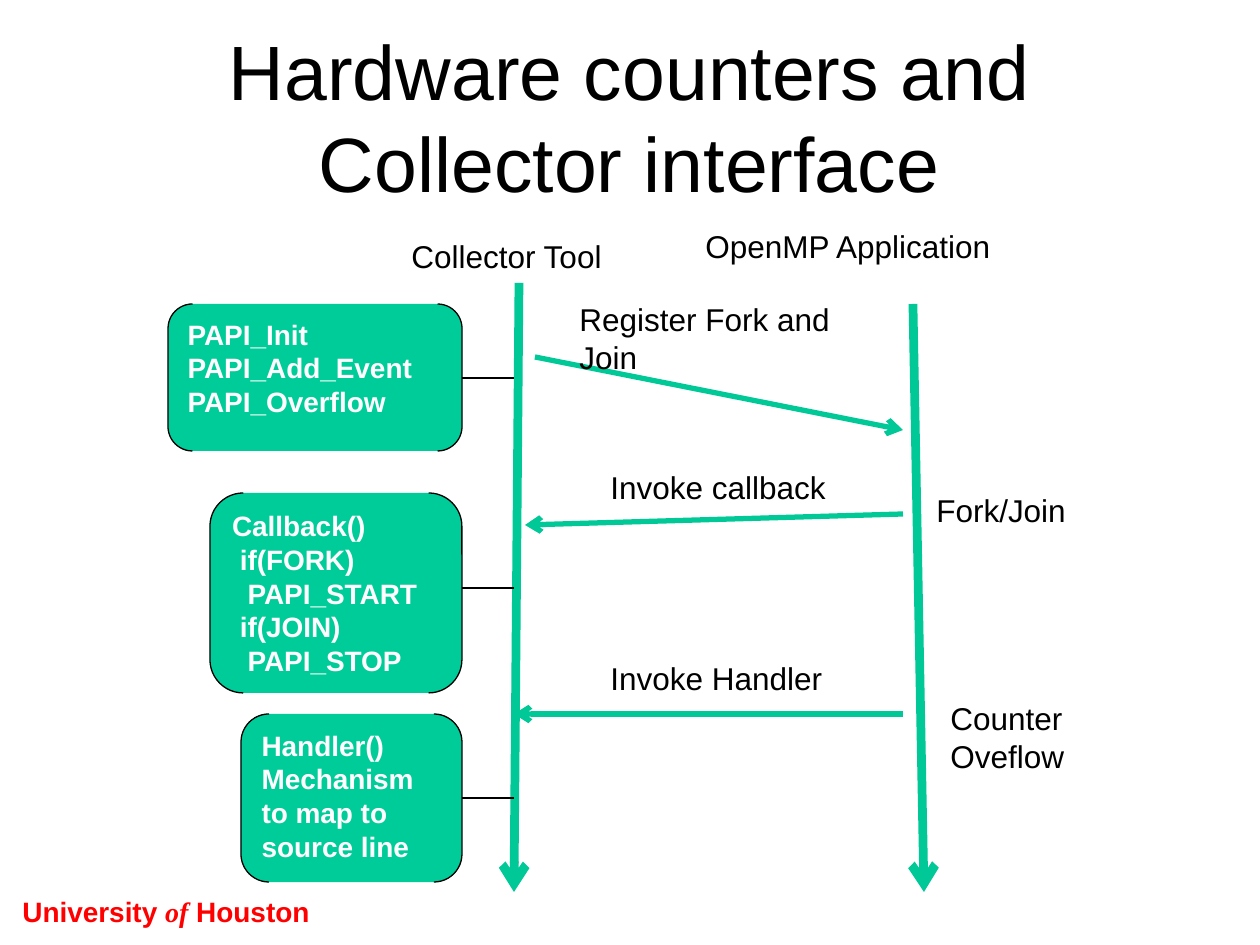
from lxml import etree
from pptx import Presentation
from pptx import util as u
from pptx.dml.color import RGBColor
from pptx.enum import shapes, text
from pptx.oxml.ns import qn

EMU_PER_PX = 914400 / 126
BLACK, WHITE, RED = "000000", "FFFFFF", "FF0000"
ARROW_GREEN, BOX_GREEN = "00C896", "00CC99"


def px(*lengths):
    return [u.Emu(round(n * EMU_PER_PX)) for n in lengths]


def rgb(color):
    return RGBColor.from_string(color)


def style(font, size, color, bold=False, name="Arial"):
    font.name = name
    font.size = u.Pt(size)
    font.bold = bold
    font.color.rgb = rgb(color)


def add_title(s, wording, box):
    sp = s.shapes.title
    sp.left, sp.top, sp.width, sp.height = px(*box)
    tf = sp.text_frame
    tf.text = wording
    tf.auto_size = text.MSO_AUTO_SIZE.NONE
    tf.vertical_anchor = text.MSO_ANCHOR.MIDDLE
    p = tf.paragraphs[0]
    p.alignment = text.PP_ALIGN.CENTER
    style(p.font, 44, BLACK)


def add_label(s, wording, box, wrap=False):
    tf = s.shapes.add_textbox(*px(*box)).text_frame
    tf.word_wrap = wrap
    tf.text = wording
    style(tf.paragraphs[0].font, 18, BLACK)


def add_footer(s, box):
    tf = s.shapes.add_textbox(*px(*box)).text_frame
    tf.word_wrap = True
    p = tf.paragraphs[0]
    style(p.font, 16, RED, bold=True)
    for wording in ("University ", "of", " Houston"):
        r = p.add_run()
        r.text = wording
        if wording == "of":
            r.font.name = "Times New Roman"
            r.font.italic = True


def add_code_box(s, lines, box):
    sp = s.shapes.add_shape(shapes.MSO_SHAPE.DOUBLE_BRACKET, *px(*box))
    sp.shadow.inherit = False
    sp.fill.solid()
    sp.fill.fore_color.rgb = rgb(BOX_GREEN)
    sp.line.color.rgb = rgb(BLACK)
    sp.line.width = u.Pt(0.75)
    tf = sp.text_frame
    tf.word_wrap = True
    tf.vertical_anchor = text.MSO_ANCHOR.TOP
    tf.text = "\n".join(lines)
    for p in tf.paragraphs:
        p.alignment = text.PP_ALIGN.LEFT
        style(p.font, 16, WHITE, bold=True)


def add_line(s, ends, color, width, arrow=False):
    line = s.shapes.add_connector(shapes.MSO_CONNECTOR.STRAIGHT, *px(*ends))
    line.line.color.rgb = rgb(color)
    line.line.width = u.Pt(width)
    if arrow:
        etree.SubElement(line.line._get_or_add_ln(), qn("a:tailEnd"), type="arrow")
    etree.SubElement(line._element.spPr, qn("a:effectLst"))


def main():
    prs = Presentation()
    prs.slide_width, prs.slide_height = px(1260, 945)
    s = prs.slides.add_slide(prs.slide_layouts[5])

    add_footer(s, (10, 888, 336, 47))
    add_title(s, "Hardware counters and Collector interface", (63, 38, 1133, 156))

    messages = [(535, 357, 903, 430), (903, 514, 525, 525), (903, 714, 514, 714)]
    for ends in messages:
        add_line(s, ends, ARROW_GREEN, 3, arrow=True)
    timelines = [(519, 283, 514, 892), (913, 304, 924, 892)]
    for ends in timelines:
        add_line(s, ends, ARROW_GREEN, 5, arrow=True)

    add_label(s, "OpenMP Application", (693, 221, 312, 50))
    add_label(s, "Collector Tool", (399, 231, 218, 50))
    add_label(s, "Invoke callback", (598, 462, 243, 50))
    add_label(s, "Invoke Handler", (598, 653, 239, 50))
    add_label(s, "Register Fork and Join", (567, 294, 284, 89), wrap=True)
    add_label(s, "Fork/Join", (924, 485, 165, 50), wrap=True)
    add_label(s, "Counter Oveflow", (938, 693, 165, 89), wrap=True)

    box_right, tool_x = 462, 514
    code_boxes = [
        (["PAPI_Init", "PAPI_Add_Event", "PAPI_Overflow"], 168, 304, 147, 378),
        (["Callback()", " if(FORK)", "  PAPI_START", " if(JOIN)", "  PAPI_STOP"],
         210, 493, 200, 588),
        (["Handler()", "Mechanism to map to source line"], 241, 714, 168, 798),
    ]
    for lines, left, top, height, link_y in code_boxes:
        add_code_box(s, lines, (left, top, box_right - left, height))
        add_line(s, (box_right, link_y, tool_x, link_y), BLACK, 0.75)

    prs.save("out.pptx")


if __name__ == "__main__":
    main()
